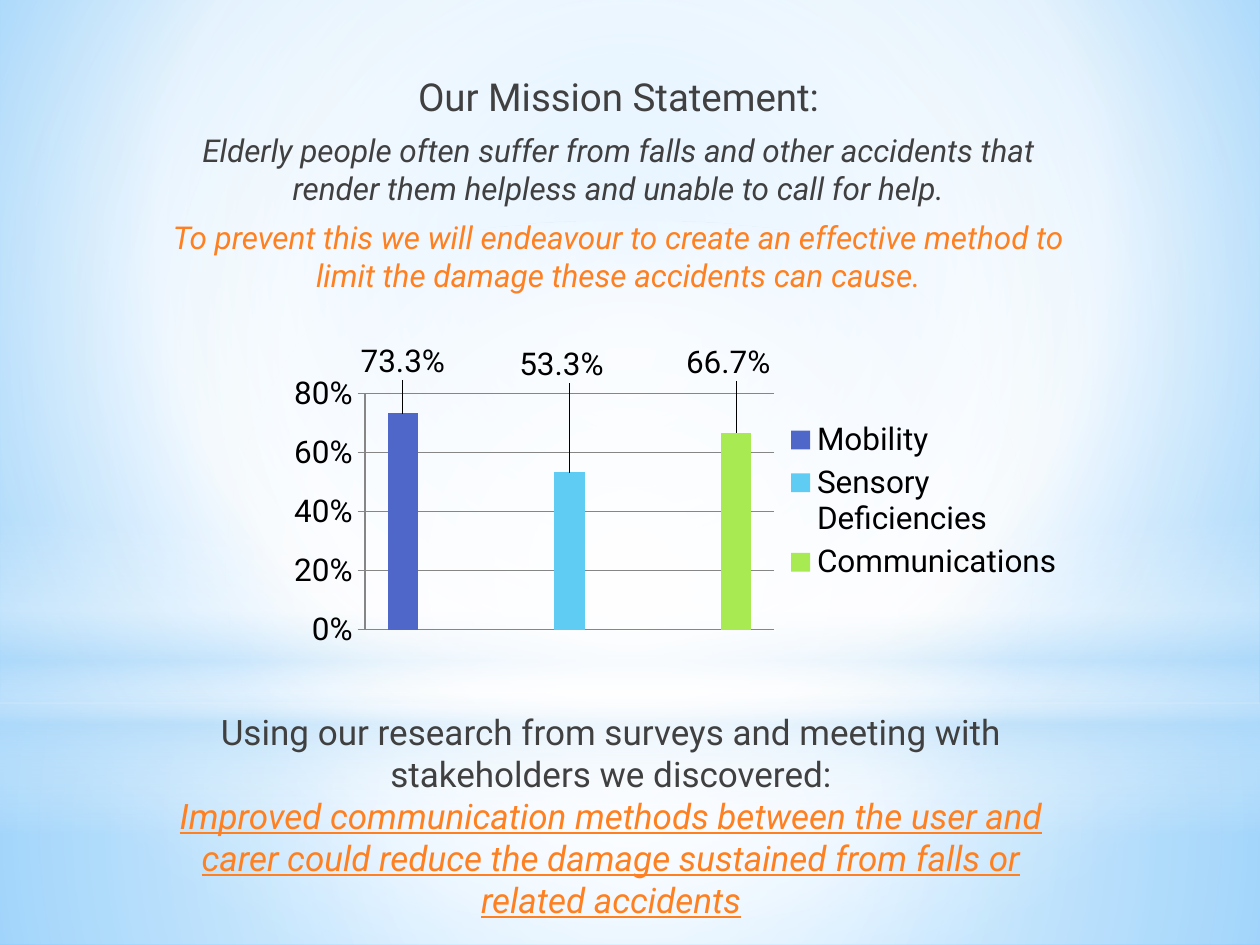
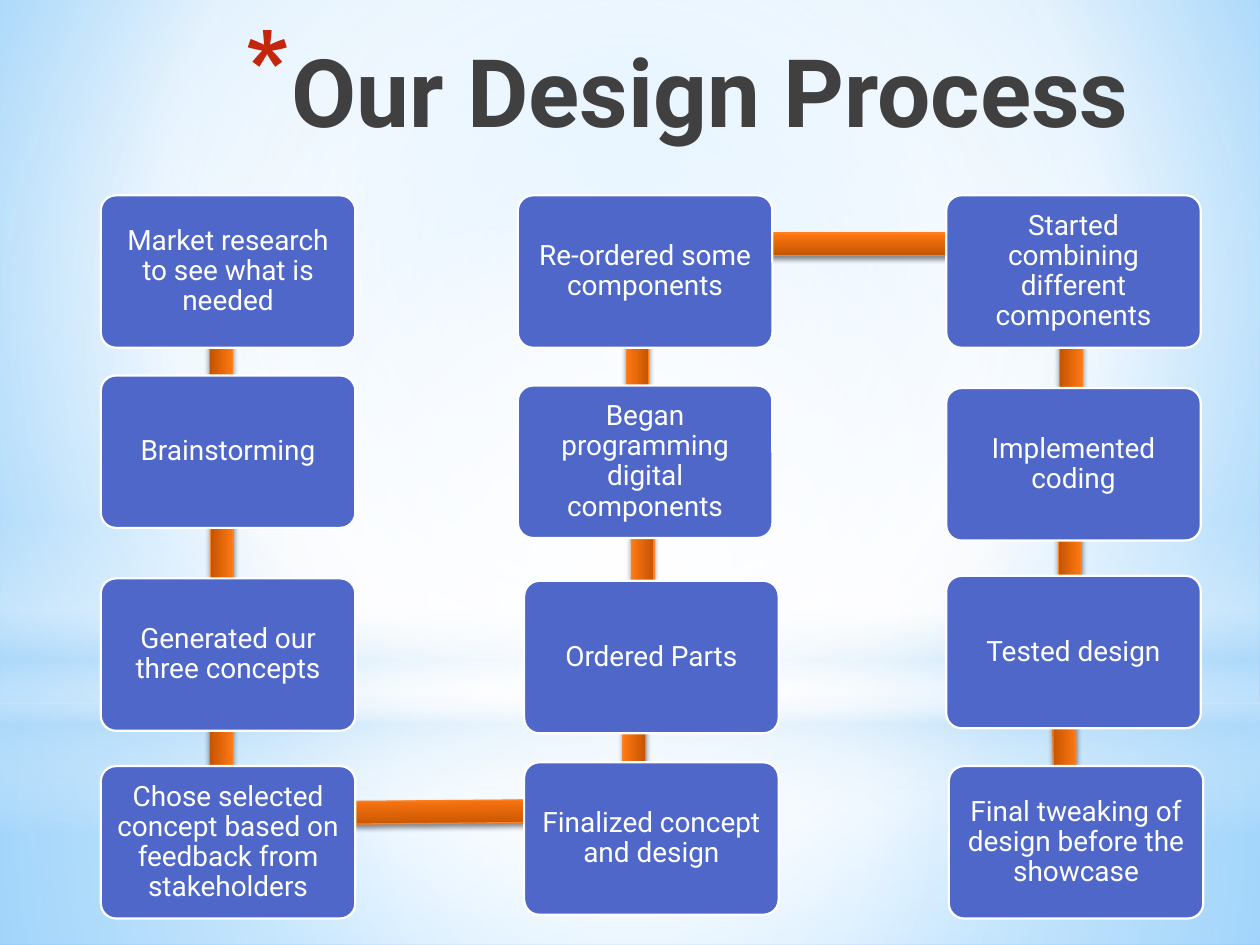
from lxml import etree
from pptx import Presentation
from pptx.chart.data import CategoryChartData
from pptx.dml.color import RGBColor
from pptx.enum.chart import XL_CHART_TYPE, XL_LEGEND_POSITION, XL_TICK_MARK
from pptx.enum.shapes import MSO_SHAPE
from pptx.enum.text import MSO_ANCHOR, MSO_AUTO_SIZE, PP_ALIGN
from pptx.oxml import parse_xml
from pptx.oxml.ns import nsdecls, qn
from pptx.util import Inches, Pt

COLUMNS = XL_CHART_TYPE.COLUMN_CLUSTERED
LEGEND_RIGHT = XL_LEGEND_POSITION.RIGHT
TICK_OUT = XL_TICK_MARK.OUTSIDE
RECT, OVAL, ROUNDED = MSO_SHAPE.RECTANGLE, MSO_SHAPE.OVAL, MSO_SHAPE.ROUNDED_RECTANGLE
CENTER, RIGHT = PP_ALIGN.CENTER, PP_ALIGN.RIGHT
TOP, MIDDLE = MSO_ANCHOR.TOP, MSO_ANCHOR.MIDDLE
GROW = MSO_AUTO_SIZE.SHAPE_TO_FIT_TEXT

WHITE = RGBColor(0xFF, 0xFF, 0xFF)
BLACK = RGBColor(0, 0, 0)
DARK = RGBColor(0x40, 0x40, 0x40)
NAVY = RGBColor(0x21, 0x27, 0x45)
GRID_GRAY = RGBColor(0x86, 0x86, 0x86)
BLUE = RGBColor(0x4E, 0x67, 0xC8)
CYAN = RGBColor(0x5E, 0xCC, 0xF3)
GREEN = RGBColor(0xA7, 0xEA, 0x52)
ORANGE = RGBColor(0xFF, 0x80, 0x21)
BAR_LIGHT = RGBColor(0xFF, 0x78, 0x13)
BAR_DARK = RGBColor(0xC4, 0x54, 0x00)
RED = RGBColor(0xC3, 0x26, 0x0C)
PALE = RGBColor(0xB4, 0xDC, 0xFA)
SKY = RGBColor(0x9E, 0xD5, 0xFF)
DEEP_SKY = RGBColor(0x5B, 0xB9, 0xFF)

FONT = "Roboto"
MIDPOINT = (50, 50, 50, 50)
BOX_W, BOX_H, BAR_H = 2.02, 1.21, 0.18

# Shape, place, gradient stops (position, colour, opacity), focus of a radial gradient
BACKDROP = [
    (RECT, (0, 5.58, 10, 1.92),
     [(0, WHITE, 91), (37, WHITE, 76), (100, PALE, 79)], MIDPOINT),
    (RECT, (0, 0, 10, 5.58),
     [(0, WHITE, 89), (48, WHITE, 62), (100, PALE, 79)], MIDPOINT),
    (RECT, (0, 4.12, 10, 2.5),
     [(0, WHITE, 0), (29, WHITE, 30), (45, PALE, 40), (55, WHITE, 26),
      (65, PALE, 60), (100, WHITE, 0)], None),
    (OVAL, (0, 1.75, 10, 5.58), [(0, WHITE, 100), (56, WHITE, 0)], MIDPOINT),
]

# Series name, value, colour, offset of its label
SURVEY = [
    ("Mobility", 0.733, BLUE, (0.0, -0.09)),
    ("Sensory Deficiencies", 0.533, CYAN, (-0.01, -0.27)),
    ("Communications", 0.667, GREEN, (-0.01, -0.15)),
]

# Step, left and top of its box, bar to the next step (left, top, length, rotation)
STEPS = [
    ("Market research to see what is needed", 0.8, 1.55, (1.04, 2.45, 1.43, 90)),
    ("Brainstorming", 0.8, 2.98, (0.96, 3.98, 1.6, 90)),
    ("Generated our three concepts", 0.8, 4.59, (1.01, 5.55, 1.49, 90)),
    ("Chose selected concept based on feedback from stakeholders", 0.8, 6.08,
     (2.35, 6.35, 3.35, 359.5)),
    ("Finalized concept and design", 4.16, 6.05, (4.32, 5.85, 1.43, 270)),
    ("Ordered Parts", 4.16, 4.61, (4.33, 4.04, 1.54, 270)),
    ("Began programming digital components", 4.11, 3.06, (4.31, 2.66, 1.5, 270)),
    ("Re-ordered some components", 4.11, 1.55, (5.87, 1.85, 3.4, 0)),
    ("Started combining different components", 7.51, 1.55, (7.74, 2.52, 1.52, 90)),
    ("Implemented coding", 7.51, 3.08, (7.75, 4.03, 1.48, 90)),
    ("Tested design", 7.51, 4.57, (7.69, 5.52, 1.51, 89.6)),
    ("Final tweaking of design before the showcase", 7.53, 6.08, None),
]


def inches(place):
    return [Inches(v) for v in place]


def set_gradient(props, stops, focus=None):
    """Replace the empty fill in props: radial around focus, else top to bottom."""
    gs = "".join(
        f'<a:gs pos="{pos * 1000}"><a:srgbClr val="{color}">'
        f'<a:alpha val="{alpha * 1000}"/></a:srgbClr></a:gs>'
        for pos, color, alpha in stops)
    if focus:
        sides = " ".join(f'{side}="{v * 1000}"' for side, v in zip("ltrb", focus))
        shade = f'<a:path path="circle"><a:fillToRect {sides}/></a:path>'
    else:
        shade = '<a:lin ang="5400000" scaled="0"/>'
    fill = parse_xml(f'<a:gradFill {nsdecls("a")} rotWithShape="1">'
                     f'<a:gsLst>{gs}</a:gsLst>{shade}</a:gradFill>')
    props.replace(props.find(qn("a:noFill")), fill)


def manual_layout(x, y, size=None):
    """Chart layout: an offset for a label, or an inner frame when size is given."""
    values = [("x", x), ("y", y)]
    if size:
        values = ([("layoutTarget", "inner"), ("xMode", "edge"), ("yMode", "edge")]
                  + values + [("w", size[0]), ("h", size[1])])
    items = "".join(f'<c:{tag} val="{v}"/>' for tag, v in values)
    return parse_xml(f'<c:layout {nsdecls("c")}><c:manualLayout>{items}'
                     '</c:manualLayout></c:layout>')


class Deck:
    def __init__(self):
        self.prs = Presentation()
        self.prs.slide_width, self.prs.slide_height = Inches(10), Inches(7.5)
        self.slide = None

    def new_slide(self, layout):
        self.slide = self.prs.slides.add_slide(self.prs.slide_layouts[layout])

    def backdrop(self):
        """Give the master its background and move the light bands onto it."""
        master = self.prs.slide_master
        master.background.fill.background()
        set_gradient(next(master.element.iter(qn("p:bgPr"))),
                     [(0, SKY, 100), (60, WHITE, 100), (100, DEEP_SKY, 100)],
                     (20, 10, 20, 60))
        for i, (kind, place, stops, focus) in enumerate(BACKDROP):
            sp = self.shape(kind, place)
            set_gradient(sp.element.spPr, stops, focus)
            sp.element.nvSpPr.cNvPr.set("id", str(100 + i))
            master.shapes.element.insert(2 + i, sp.element)

    def shape(self, kind, place):
        """A shape with no fill, line or shadow."""
        sp = self.slide.shapes.add_shape(kind, *inches(place))
        sp.fill.background()
        sp.line.fill.background()
        sp.shadow.inherit = False
        return sp

    def place(self, sp, place):
        sp.left, sp.top, sp.width, sp.height = inches(place)

    def run(self, p, text, size, color, bold=None, italic=None, underline=None):
        r = p.add_run()
        r.text = text
        font = r.font
        font.name, font.size = FONT, Pt(size)
        font.bold, font.italic, font.underline = bold, italic, underline
        font.color.rgb = color
        return r

    def paragraphs(self, tf, items):
        """Add one centred paragraph per (text, size, colour, font flags)."""
        for i, (text, size, color, flags) in enumerate(items):
            p = tf.add_paragraph() if i else tf.paragraphs[0]
            p.alignment = CENTER
            self.run(p, text, size, color, **flags)
        return tf.paragraphs

    def title(self, text, place):
        sp = self.slide.shapes.title
        self.place(sp, place)
        sp.text_frame.vertical_anchor = TOP
        p = sp.text_frame.paragraphs[0]
        p.alignment = RIGHT
        pPr = p._p.get_or_add_pPr()
        pPr.set("marL", str(Inches(0.35)))
        pPr.set("indent", str(Inches(-0.35)))
        color = etree.SubElement(pPr, qn("a:buClr"))
        etree.SubElement(color, qn("a:srgbClr"), val=str(RED))
        etree.SubElement(pPr, qn("a:buSzPct"), val="128000")
        etree.SubElement(pPr, qn("a:buChar"), char="*")
        r = self.run(p, text, 54, DARK, bold=True)
        r.font.fill.background()
        set_gradient(r.font.fill._xPr,
                     [(0, BLACK, 100), (40, DARK, 100), (100, NAVY, 65)])

    def body(self, place, items):
        sp = self.slide.placeholders[1]
        self.place(sp, place)
        for p in self.paragraphs(sp.text_frame, items):
            p.space_after = Pt(3)
            pPr = p._p.get_or_add_pPr()
            pPr.set("marL", str(Inches(0.05)))
            pPr.set("indent", "0")
            etree.SubElement(pPr, qn("a:buNone"))

    def text_box(self, place, items):
        tf = self.slide.shapes.add_textbox(*inches(place)).text_frame
        tf.word_wrap = True
        tf.auto_size = GROW
        self.paragraphs(tf, items)

    def column_chart(self, place, rows):
        """One column per row, each in its own category."""
        data = CategoryChartData()
        data.categories = [str(i + 1) for i in range(len(rows))]
        for i, (name, value, _, _) in enumerate(rows):
            data.add_series(name, [value if j == i else None for j in range(len(rows))])
        chart = self.slide.shapes.add_chart(COLUMNS, *inches(place), data).chart
        chart.font.name, chart.font.size = FONT, Pt(18)
        chart.font.color.rgb = BLACK
        chart.has_title = False
        chart.has_legend = True
        chart.legend.position = LEGEND_RIGHT
        chart.legend.include_in_layout = False
        chart.category_axis.visible = False

        axis = chart.value_axis
        axis.minimum_scale, axis.maximum_scale, axis.major_unit = 0, 0.8, 0.2
        axis.major_tick_mark = TICK_OUT
        axis.tick_labels.number_format = "0%"
        axis.tick_labels.number_format_is_linked = False
        for line in (axis.format.line, axis.major_gridlines.format.line):
            line.color.rgb = GRID_GRAY
            line.width = Pt(0.75)

        plot = chart.plots[0]
        plot.gap_width, plot.overlap = 150, 0
        plot.vary_by_categories = False
        for i, (series, (_, _, color, _)) in enumerate(zip(plot.series, rows)):
            series.format.fill.solid()
            series.format.fill.fore_color.rgb = color
            labels = series.data_labels
            labels.show_value = True
            labels.number_format = "0.0%"
            labels.number_format_is_linked = False
            series.points[i].data_label.font.size = Pt(18)
        for label, (_, _, _, offset) in zip(chart.element.iter(qn("c:dLbl")), rows):
            label.insert(1, manual_layout(*offset))
            label.insert(2, parse_xml(f'<c:numFmt {nsdecls("c")} formatCode="0.0%" '
                                      'sourceLinked="0"/>'))
        area = next(chart.element.iter(qn("c:plotArea")))
        for layout in area.findall(qn("c:layout")):
            area.remove(layout)
        area.insert(0, manual_layout(0.114, 0.154, (0.509, 0.76)))

    def bar(self, left, top, length, rotation):
        sp = self.shape(RECT, (left, top, length, BAR_H))
        sp.rotation = rotation
        set_gradient(sp.element.spPr, [(0, BAR_LIGHT, 100), (100, BAR_DARK, 100)])
        sp.line.color.rgb = ORANGE
        sp.line.width = Pt(0.75)
        effects = sp.element.spPr.find(qn("a:effectLst"))
        shadow = etree.SubElement(effects, qn("a:outerShdw"), blurRad=str(Pt(3.1)),
                                  dist=str(Pt(1.8)), dir="5400000", rotWithShape="0")
        color = etree.SubElement(shadow, qn("a:srgbClr"), val=str(BLACK))
        etree.SubElement(color, qn("a:alpha"), val="45000")

    def step_box(self, text, left, top):
        sp = self.shape(ROUNDED, (left, top, BOX_W, BOX_H))
        sp.adjustments[0] = 0.1
        sp.fill.solid()
        sp.fill.fore_color.rgb = BLUE
        sp.line.color.rgb = WHITE
        sp.line.width = Pt(1.25)
        tf = sp.text_frame
        tf.word_wrap = True
        tf.vertical_anchor = MIDDLE
        tf.margin_left = tf.margin_right = tf.margin_top = tf.margin_bottom = Inches(0.07)
        self.paragraphs(tf, [(text, 16, WHITE, {})])[0].line_spacing = 0.9


def mission_slide(deck):
    title = deck.slide.shapes.title.element
    title.getparent().remove(title)
    deck.body((1.16, 0.53, 7.45, 3.11), [
        ("Our Mission Statement:", 22, DARK, {}),
        ("Elderly people often suffer from falls and other accidents that render "
         "them helpless and unable to call for help.", 18, DARK, {"italic": True}),
        ("To prevent this we will endeavour to create an effective method to limit "
         "the damage these accidents can cause.", 18, ORANGE, {"italic": True}),
    ])
    deck.text_box((1.15, 5.59, 7.4, 1.78), [
        ("Using our research from surveys and meeting with stakeholders we "
         "discovered:", 20, DARK, {}),
        ("Improved communication methods between the user and carer could reduce the "
         "damage sustained from falls or related accidents", 20, ORANGE,
         {"italic": True, "underline": True}),
    ])
    deck.column_chart((2.17, 2.73, 6.38, 2.48), SURVEY)


def process_slide(deck):
    deck.title("Our Design Process", (0.91, 0.21, 8.15, 1.25))
    for text, left, top, bar in STEPS:
        if bar:
            deck.bar(*bar)
        deck.step_box(text, left, top)


def main():
    deck = Deck()
    deck.new_slide(1)
    deck.backdrop()
    mission_slide(deck)
    deck.new_slide(5)
    process_slide(deck)
    deck.prs.save("out.pptx")


if __name__ == "__main__":
    main()
